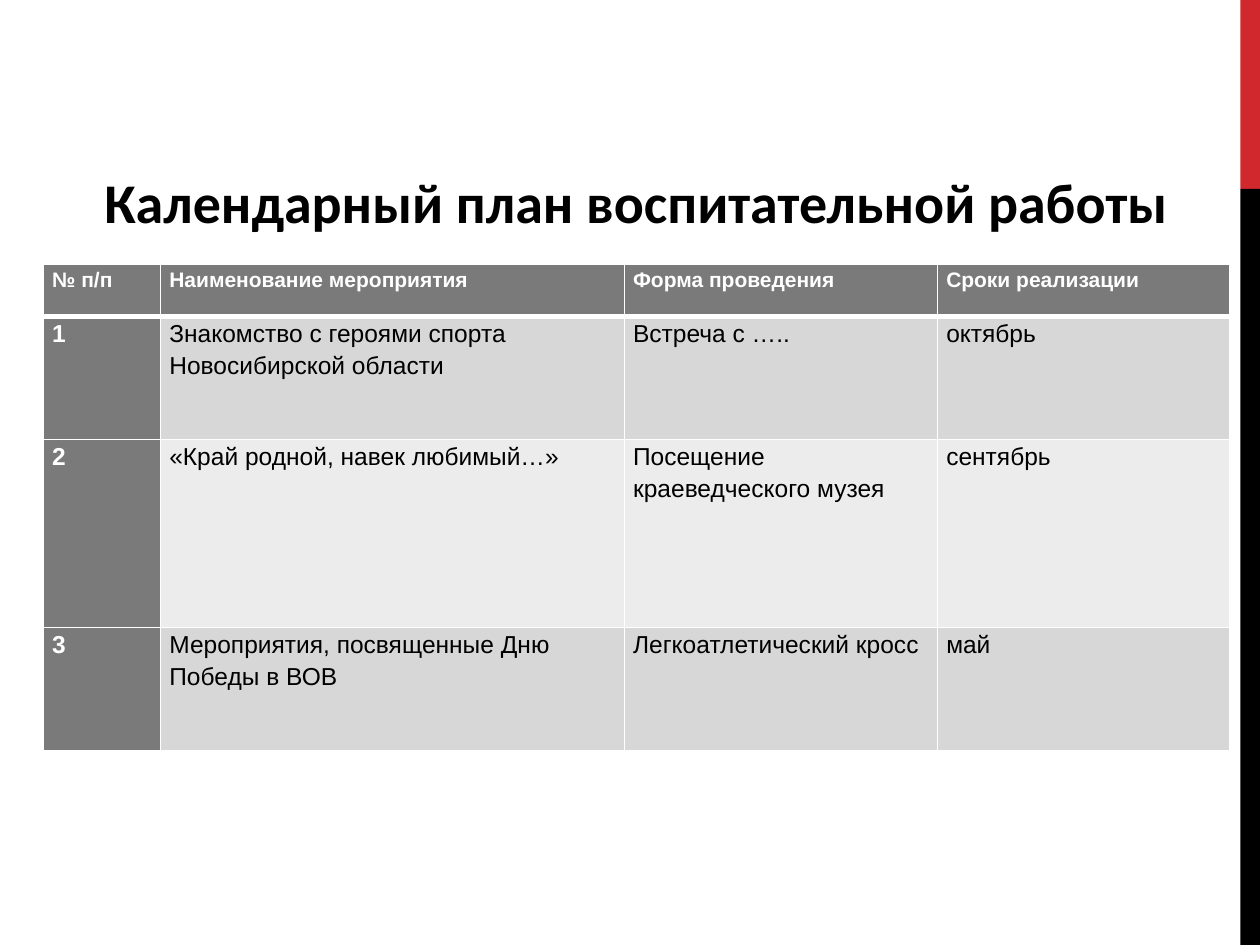
"""Build the slide with the calendar plan of educational work."""
from lxml.etree import SubElement
from pptx import Presentation
from pptx.dml.color import RGBColor
from pptx.enum.shapes import MSO_SHAPE
from pptx.enum.text import MSO_ANCHOR, PP_ALIGN
from pptx.oxml.ns import qn
from pptx.util import Pt

HUES = {"red": "D1282E", "black": "000000", "white": "FFFFFF",
        "head": "7A7A7A", "dark": "D7D7D7", "light": "ECECEC"}
ROWS = [
    ["№ п/п", "Наименование мероприятия", "Форма проведения", "Сроки реализации"],
    ["1", "Знакомство с героями спорта Новосибирской области", "Встреча с …..", "октябрь"],
    ["2", "«Край родной, навек любимый…»", "Посещение краеведческого музея", "сентябрь"],
    ["3", "Мероприятия, посвященные Дню Победы в ВОВ", "Легкоатлетический кросс", "май"],
]
WIDTHS = [67, 265, 179, 167]
HEIGHTS = [29.5, 70.5, 107.3, 70.6]


def style(run, hue, form):
    for key, val in form.items():
        setattr(run.font, key, val)
    run.font.color.rgb = RGBColor.from_string(HUES[hue])


def edge(cell, side, width):
    line = SubElement(cell._tc.get_or_add_tcPr(), qn("a:" + side), w=str(Pt(width)))
    fill = SubElement(line, qn("a:solidFill"))
    SubElement(fill, qn("a:srgbClr"), val=HUES["white"])


deck = Presentation()
deck.slide_width, deck.slide_height = Pt(720), Pt(540)
slide = deck.slides.add_slide(deck.slide_layouts[6])

for hue, top, high in [("red", 0, 108), ("black", 108, 432)]:
    bar = slide.shapes.add_shape(MSO_SHAPE.RECTANGLE, Pt(708.75), Pt(top), Pt(11.25), Pt(high))
    bar.shadow.inherit = False
    bar.fill.solid()
    bar.fill.fore_color.rgb = RGBColor.from_string(HUES[hue])
    bar.line.fill.background()

grid = slide.shapes.add_table(4, 4, Pt(24.8), Pt(151.2), Pt(sum(WIDTHS)), Pt(sum(HEIGHTS))).table
grid.first_col = True
for col, width in zip(grid.columns, WIDTHS):
    col.width = Pt(width)
for row, high in zip(grid.rows, HEIGHTS):
    row.height = Pt(high)

for r, texts in enumerate(ROWS):
    for c, text in enumerate(texts):
        cell = grid.cell(r, c)
        main = r == 0 or c == 0
        form = {"margin_left": Pt(5), "margin_right": Pt(5), "margin_top": 0, "margin_bottom": 0}
        for key, val in form.items():
            setattr(cell, key, val)
        for side in ("lnL", "lnR", "lnT", "lnB"):
            thick = (r, side) in [(0, "lnB"), (1, "lnT")]
            edge(cell, side, 3 if thick else 1)
        cell.fill.solid()
        hue = "head" if main else "dark" if r % 2 else "light"
        cell.fill.fore_color.rgb = RGBColor.from_string(HUES[hue])
        para = cell.text_frame.paragraphs[0]
        para.line_spacing = 1.15
        run = para.add_run()
        run.text = text
        style(run, "white" if main else "black",
              {"name": "Arial", "size": Pt(14 if r else 12), "bold": main})

title = slide.shapes.add_textbox(Pt(24.8), Pt(67), Pt(678), Pt(70.5)).text_frame
title.word_wrap = True
title.vertical_anchor = MSO_ANCHOR.BOTTOM
para = title.paragraphs[0]
para.alignment = PP_ALIGN.CENTER
run = para.add_run()
run.text = "Календарный план воспитательной работы"
style(run, "black", {"name": "Calibri", "size": Pt(32), "bold": True})

deck.save("out.pptx")
